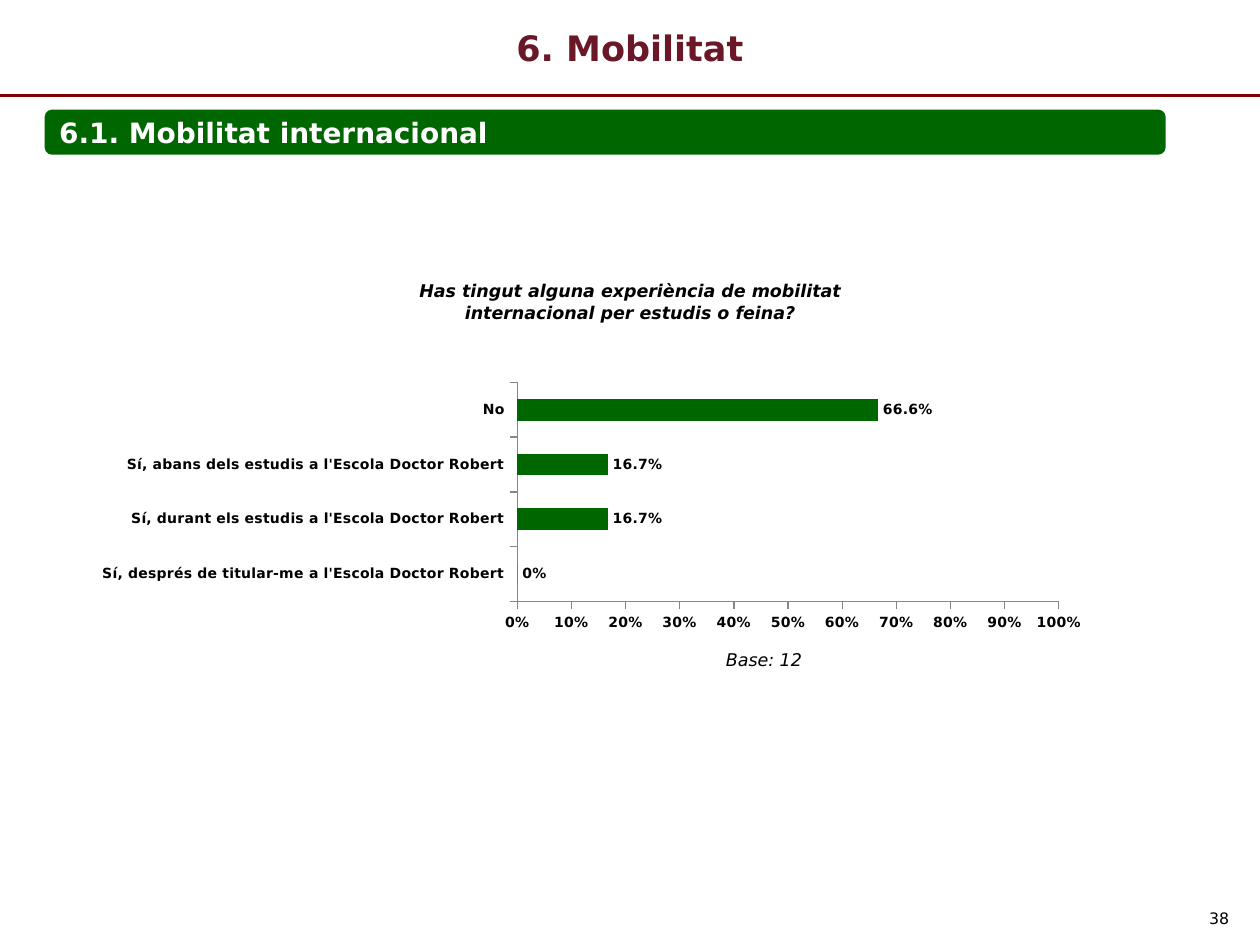
import pptx
import pptx.chart.data
import pptx.dml.color
import pptx.enum.chart
import pptx.enum.shapes
import pptx.enum.text
import pptx.oxml
import pptx.oxml.ns
import pptx.util
from pptx.util import Cm

FONT = "DejaVu Sans"
COLORS = {
    "black": "000000",
    "white": "FFFFFF",
    "title": "6A1727",
    "rule": "800000",
    "green": "006600",
    "axis": "868686",
}
ALIGN = pptx.enum.text.PP_ALIGN
ANCHOR = pptx.enum.text.MSO_ANCHOR
OUTSIDE_END = pptx.enum.chart.XL_LABEL_POSITION.OUTSIDE_END
ANSWERS = [
    ("Sí, després de titular-me a l'Escola Doctor Robert", 0),
    ("Sí, durant els estudis a l'Escola Doctor Robert", 0.167),
    ("Sí, abans dels estudis a l'Escola Doctor Robert", 0.167),
    ("No", 0.666),
]
PLOT_LAYOUT = {"x": 0.433, "y": 0.036, "w": 0.53, "h": 0.845}


def color(name):
    return pptx.dml.color.RGBColor.from_string(COLORS[name])


def set_font(font, size, color_name="black", bold=False, italic=False):
    font.name = FONT
    font.size = pptx.util.Pt(size)
    font.bold = bold
    font.italic = italic
    font.color.rgb = color(color_name)


def write_text(shape, text, size, align, anchor=ANCHOR.TOP, **style):
    frame = shape.text_frame
    frame.word_wrap = True
    frame.vertical_anchor = anchor
    paragraph = frame.paragraphs[0]
    paragraph.text = text
    paragraph.alignment = align
    set_font(paragraph.font, size, **style)


def add_text(slide, box, text, size, align, **style):
    shape = slide.shapes.add_textbox(*map(Cm, box))
    write_text(shape, text, size, align, **style)


def add_rule(slide, top, width):
    line = slide.shapes.add_connector(
        pptx.enum.shapes.MSO_CONNECTOR.STRAIGHT, Cm(0), Cm(top), Cm(width), Cm(top))
    line.line.color.rgb = color("rule")
    line.line.width = pptx.util.Pt(1.5)
    properties = line._element.spPr
    properties.append(pptx.oxml.parse_xml(
        f'<a:effectLst {pptx.oxml.ns.nsdecls("a")}/>'))


def add_section_bar(slide, box, text):
    shape = slide.shapes.add_shape(
        pptx.enum.shapes.MSO_SHAPE.ROUNDED_RECTANGLE, *map(Cm, box))
    shape.shadow.inherit = False
    shape.fill.solid()
    shape.fill.fore_color.rgb = color("green")
    shape.line.fill.background()
    write_text(shape, text, 16, ALIGN.LEFT, ANCHOR.MIDDLE, color_name="white", bold=True)


def style_axis(axis):
    axis.has_major_gridlines = False
    axis.major_tick_mark = pptx.enum.chart.XL_TICK_MARK.OUTSIDE
    axis.minor_tick_mark = pptx.enum.chart.XL_TICK_MARK.NONE
    axis.format.line.color.rgb = color("axis")
    set_font(axis.tick_labels.font, 8, bold=True)


def place_plot(chart):
    plot_area = chart._chartSpace.chart.plotArea
    for layout in plot_area.findall(pptx.oxml.ns.qn("c:layout")):
        plot_area.remove(layout)
    modes = '<c:xMode val="edge"/><c:yMode val="edge"/>'
    sizes = "".join(f'<c:{key} val="{value}"/>' for key, value in PLOT_LAYOUT.items())
    plot_area.insert(0, pptx.oxml.parse_xml(
        f'<c:layout {pptx.oxml.ns.nsdecls("c")}><c:manualLayout>'
        f'<c:layoutTarget val="inner"/>{modes}{sizes}</c:manualLayout></c:layout>'))


def style_label(label):
    label.position = OUTSIDE_END
    set_font(label.font, 8, bold=True)


def label_series(series):
    labels = series.data_labels
    labels.show_value = True
    labels.number_format = "0.0%"
    labels.number_format_is_linked = False
    style_label(labels)

    zero_label = series.points[0].data_label
    style_label(zero_label)
    element = zero_label._get_or_add_dLbl()
    element.find(pptx.oxml.ns.qn("c:idx")).addnext(pptx.oxml.parse_xml(
        f'<c:numFmt {pptx.oxml.ns.nsdecls("c")} formatCode="0%" sourceLinked="0"/>'))


def add_answer_chart(slide, box):
    data = pptx.chart.data.CategoryChartData(number_format="0.0%")
    data.categories = [answer for answer, share in ANSWERS]
    data.add_series("Series 1", [share for answer, share in ANSWERS])
    chart = slide.shapes.add_chart(
        pptx.enum.chart.XL_CHART_TYPE.BAR_CLUSTERED, *map(Cm, box), data).chart
    chart.has_legend = False
    chart.has_title = False
    set_font(chart.font, 18)
    place_plot(chart)

    style_axis(chart.category_axis)
    value_axis = chart.value_axis
    style_axis(value_axis)
    value_axis.minimum_scale = 0
    value_axis.maximum_scale = 1
    value_axis.major_unit = 0.1
    value_axis.tick_labels.number_format = "0%"
    value_axis.tick_labels.number_format_is_linked = False

    plot = chart.plots[0]
    plot.gap_width = 150
    plot.vary_by_categories = False
    series = plot.series[0]
    series.format.fill.solid()
    series.format.fill.fore_color.rgb = color("green")
    label_series(series)


def main():
    presentation = pptx.Presentation()
    presentation.slide_width = Cm(25.4)
    presentation.slide_height = Cm(19.05)
    slide = presentation.slides.add_slide(presentation.slide_layouts[6])

    add_rule(slide, 1.92, 25.4)
    add_text(slide, (19.11, 18.2, 5.92, 0.53), "38", 9, ALIGN.RIGHT)
    add_text(slide, (0, 0, 25.4, 1.93), "6. Mobilitat", 20, ALIGN.CENTER,
             anchor=ANCHOR.MIDDLE, color_name="title", bold=True)
    add_text(slide, (7.24, 5.53, 10.92, 1.12),
             "Has tingut alguna experiència de mobilitat internacional per estudis o feina?",
             10, ALIGN.CENTER, bold=True, italic=True)
    add_text(slide, (11.3, 12.95, 8.2, 0.69), "Base: 12", 10, ALIGN.CENTER, italic=True)
    add_answer_chart(slide, (1.51, 7.52, 20.6, 5.23))
    add_section_bar(slide, (0.9, 2.21, 22.6, 0.91), "6.1. Mobilitat internacional")

    presentation.save("out.pptx")


if __name__ == "__main__":
    main()
